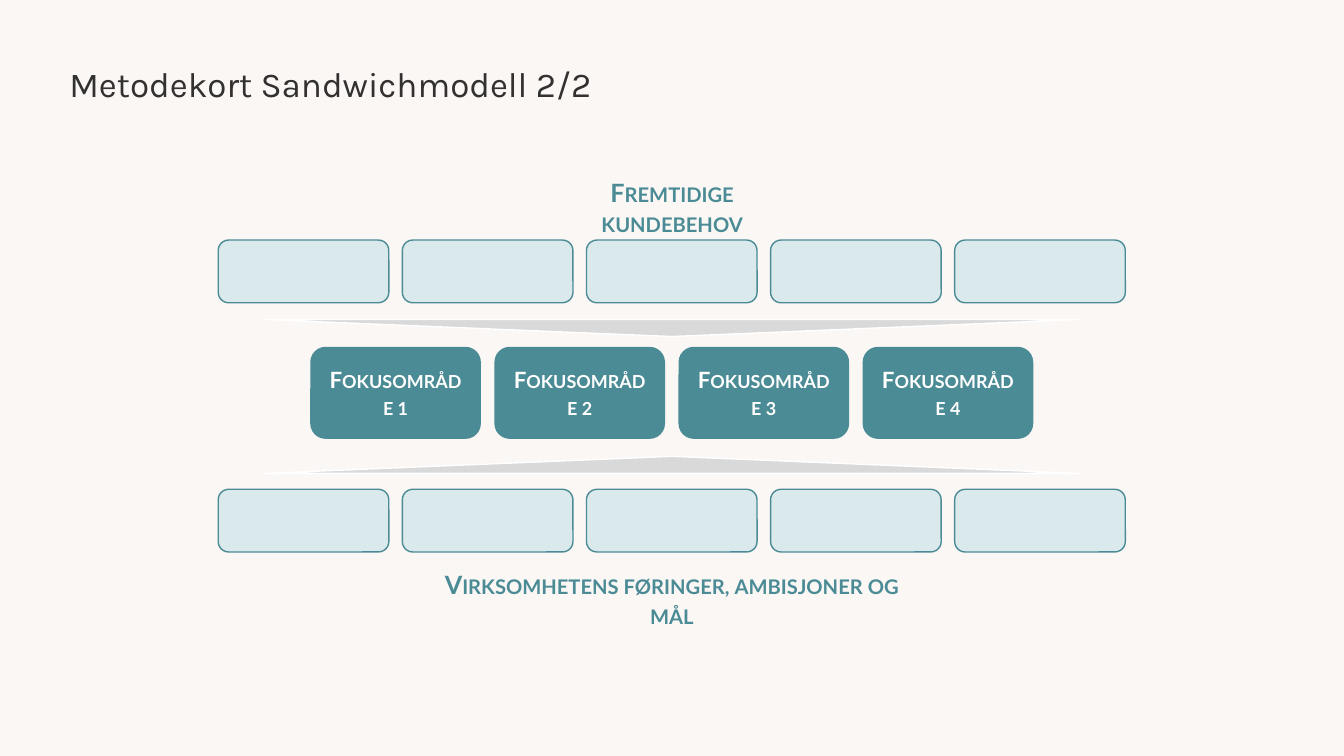
"""Build the sandwich model method card slide."""
from dataclasses import dataclass

import pptx
import pptx.dml.color
import pptx.enum.shapes
import pptx.enum.text
import pptx.util
from pptx.dml.color import RGBColor
from pptx.util import Cm, Pt

CREAM = RGBColor(0xFB, 0xF7, 0xF5)
DARK = RGBColor(0x33, 0x30, 0x30)
TEAL = RGBColor(0x4B, 0x8B, 0x95)
PALE = RGBColor(0xD9, 0xE9, 0xEC)
GREY = RGBColor(0xD9, 0xD9, 0xD9)
WHITE = RGBColor(0xFF, 0xFF, 0xFF)

KIND = pptx.enum.shapes.MSO_SHAPE
ALIGN = pptx.enum.text.PP_ALIGN
ANCHOR = pptx.enum.text.MSO_ANCHOR
FIT = pptx.enum.text.MSO_AUTO_SIZE
PITCH = 4.64
WIDTH = 4.3


@dataclass
class Row:
    left: float
    top: float
    height: float
    fill: RGBColor
    line: RGBColor | None
    texts: list[str]


@dataclass
class Wedge:
    top: float
    turn: int


@dataclass
class Label:
    text: str
    left: float
    top: float
    width: float
    height: float


ROWS = [
    Row(7.82, 8.74, 2.32, TEAL, None, [f"Fokusområde {n}" for n in range(1, 5)]),
    Row(5.5, 6.05, 1.58, PALE, TEAL, [""] * 5),
    Row(5.5, 12.33, 1.58, PALE, TEAL, [""] * 5),
]
WEDGES = [Wedge(11.5, 0), Wedge(8.05, 180)]
LABELS = [
    Label("Fremtidige kundebehov", 13.3, 4.34, 7.28, 1.02),
    Label("Virksomhetens føringer, ambisjoner og mål", 10.48, 14.22, 12.9, 1.8),
]


def set_all(target, values: dict) -> None:
    for name, value in values.items():
        setattr(target, name, value)


def write(frame, text: str, size: int, color: RGBColor) -> None:
    frame.word_wrap = True
    para = frame.paragraphs[0]
    para.alignment = ALIGN.CENTER
    run = para.add_run()
    run.text = text
    set_all(run.font, {"name": "Lato", "size": Pt(size), "bold": True})
    run.font.color.rgb = color
    run.font._element.set("cap", "small")


def add_form(slide, kind, left: float, top: float, width: float, height: float,
             fill: RGBColor, line: RGBColor | None):
    form = slide.shapes.add_shape(kind, Cm(left), Cm(top), Cm(width), Cm(height))
    form.shadow.inherit = False
    form.fill.solid()
    form.fill.fore_color.rgb = fill
    if line is None:
        form.line.fill.background()
    else:
        form.line.color.rgb = line
        form.line.width = Pt(1)
    return form


def add_row(slide, row: Row) -> None:
    for i, text in enumerate(row.texts):
        card = add_form(slide, KIND.ROUNDED_RECTANGLE, row.left + i * PITCH, row.top,
                        WIDTH, row.height, row.fill, row.line)
        if text:
            card.text_frame.vertical_anchor = ANCHOR.MIDDLE
            write(card.text_frame, text, 16, WHITE)


def add_wedge(slide, wedge: Wedge) -> None:
    form = add_form(slide, KIND.ISOSCELES_TRIANGLE, 6.65, wedge.top, 20.57, 0.43,
                    GREY, WHITE)
    form.rotation = wedge.turn


def add_label(slide, label: Label) -> None:
    box = slide.shapes.add_textbox(Cm(label.left), Cm(label.top),
                                   Cm(label.width), Cm(label.height))
    write(box.text_frame, label.text, 18, TEAL)
    box.text_frame.auto_size = FIT.SHAPE_TO_FIT_TEXT


def add_title(slide, text: str) -> None:
    box = slide.shapes.add_textbox(Cm(1.75), Cm(1.57), Cm(30.35), Cm(1.07))
    frame = box.text_frame
    set_all(frame, {"word_wrap": True, "vertical_anchor": ANCHOR.MIDDLE,
                    "margin_left": 0, "margin_right": 0,
                    "margin_top": 0, "margin_bottom": 0})
    para = frame.paragraphs[0]
    para.line_spacing = Pt(30)
    run = para.add_run()
    run.text = text
    set_all(run.font, {"name": "Karla", "size": Pt(25)})
    run.font.color.rgb = DARK


def main() -> None:
    deck = pptx.Presentation()
    set_all(deck, {"slide_width": Cm(33.87), "slide_height": Cm(19.05)})
    slide = deck.slides.add_slide(deck.slide_layouts[6])
    slide.background.fill.solid()
    slide.background.fill.fore_color.rgb = CREAM
    add_title(slide, "Metodekort Sandwichmodell 2/2")
    for row in ROWS:
        add_row(slide, row)
    for wedge in WEDGES:
        add_wedge(slide, wedge)
    for label in LABELS:
        add_label(slide, label)
    deck.save("out.pptx")


if __name__ == "__main__":
    main()
